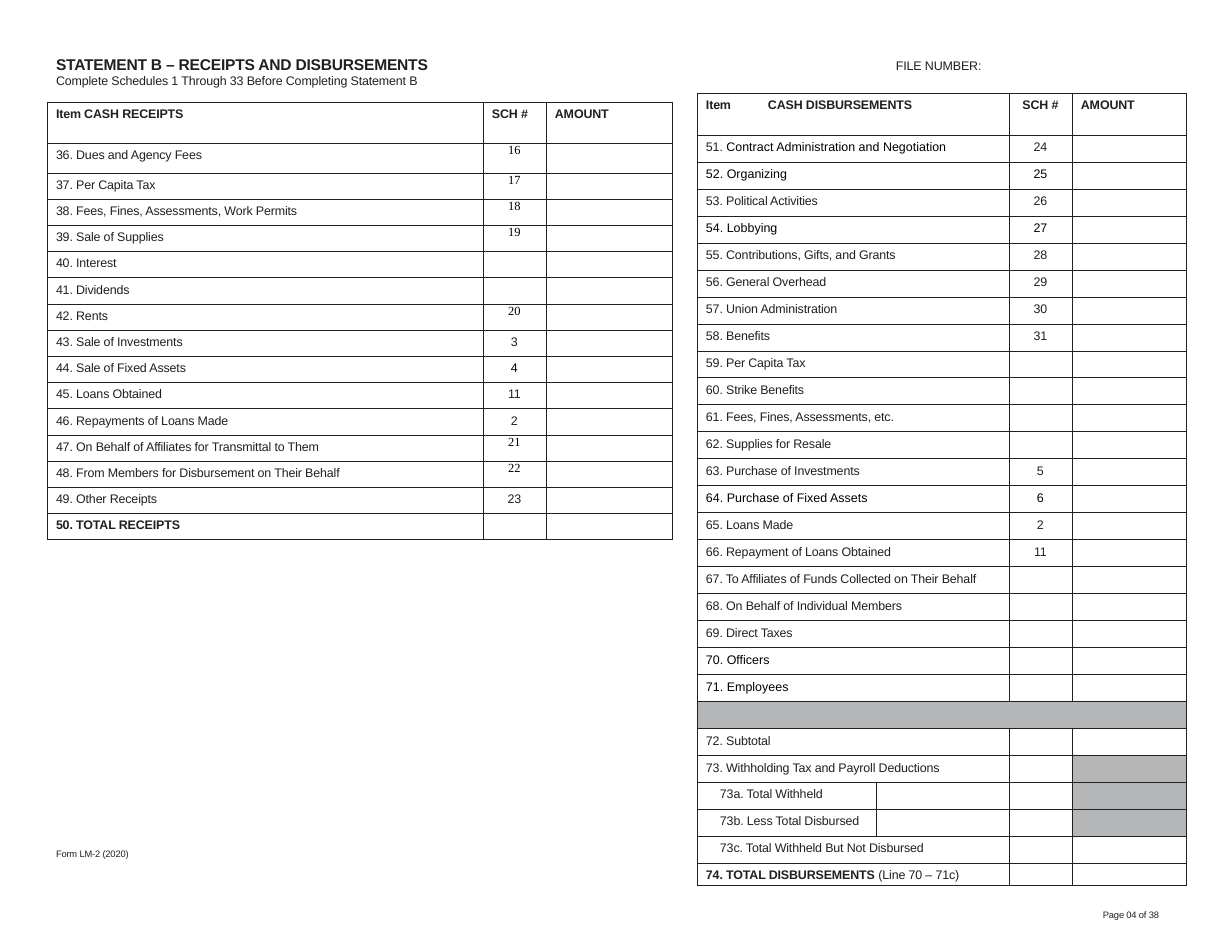
from lxml.etree import SubElement
from pptx import Presentation
from pptx.dml.color import RGBColor
from pptx.enum.text import PP_ALIGN
from pptx.oxml.ns import qn
from pptx.util import Emu, Pt

SCALE = 914400 / 112
INK = RGBColor(0x23, 0x1F, 0x20)
BLACK = RGBColor(0, 0, 0)
GREY = RGBColor(0xB4, 0xB6, 0xB8)
SANS, SERIF = "Arial", "Times New Roman"

# Item, schedule number
RECEIPTS = [
    ("36. Dues and Agency Fees", "16"),
    ("37. Per Capita Tax", "17"),
    ("38. Fees, Fines, Assessments, Work Permits", "18"),
    ("39. Sale of Supplies", "19"),
    ("40. Interest", ""),
    ("41. Dividends", ""),
    ("42. Rents", "20"),
    ("43. Sale of Investments", "3"),
    ("44. Sale of Fixed Assets", "4"),
    ("45. Loans Obtained", "11"),
    ("46. Repayments of Loans Made", "2"),
    ("47. On Behalf of Affiliates for Transmittal to Them", "21"),
    ("48. From Members for Disbursement on Their Behalf", "22"),
    ("49. Other Receipts", "23"),
    ("50. TOTAL RECEIPTS", ""),
]
SERIF_SCH = {"16", "17", "18", "19", "20", "21", "22"}

SPENDING = [
    ("51. Contract Administration and Negotiation", "24"),
    ("52. Organizing", "25"),
    ("53. Political Activities", "26"),
    ("54. Lobbying", "27"),
    ("55. Contributions, Gifts, and Grants", "28"),
    ("56. General Overhead", "29"),
    ("57. Union Administration", "30"),
    ("58. Benefits", "31"),
    ("59. Per Capita Tax", ""),
    ("60. Strike Benefits", ""),
    ("61. Fees, Fines, Assessments, etc.", ""),
    ("62. Supplies for Resale", ""),
    ("63. Purchase of Investments", "5"),
    ("64. Purchase of Fixed Assets", "6"),
    ("65. Loans Made", "2"),
    ("66. Repayment of Loans Obtained", "11"),
    ("67. To Affiliates of Funds Collected on Their Behalf", ""),
    ("68. On Behalf of Individual Members", ""),
    ("69. Direct Taxes", ""),
    ("70. Officers", ""),
    ("71. Employees", ""),
    ("", ""),
    ("72. Subtotal", ""),
    ("73. Withholding Tax and Payroll Deductions", ""),
    ("73a. Total Withheld", ""),
    ("73b. Less Total Disbursed", ""),
    ("73c. Total Withheld But Not Disbursed", ""),
    ("74. TOTAL DISBURSEMENTS ", ""),
]
DARK = {"52.", "54.", "64.", "70.", "71."}
SPLIT = {"73a.", "73b."}
NO_SUM = SPLIT | {"73."}


def px(n):
    return Emu(round(n * SCALE))


class Form:
    """Text style and the slide being filled."""

    def __init__(self, slide):
        self.slide = slide

    def style(self, run, size=8, bold=False, color=INK, face=SANS):
        font = run.font
        font.size, font.bold, font.name = Pt(size), bold, face
        font.color.rgb = color
        if color == INK:
            run._r.get_or_add_rPr().set("spc", "-10")

    def add(self, par, text, **look):
        run = par.add_run()
        run.text = text
        self.style(run, **look)

    def note(self, x, y, w, h, *lines):
        """Place a text box; each line is text, size, bold, line height."""
        frame = self.slide.shapes.add_textbox(px(x), px(y), px(w), px(h)).text_frame
        frame.word_wrap = True
        frame.margin_left = frame.margin_right = 0
        frame.margin_top = frame.margin_bottom = 0
        for i, (text, size, bold, lead) in enumerate(lines):
            par = frame.add_paragraph() if i else frame.paragraphs[0]
            par.text = text
            if lead:
                par.line_spacing = Pt(lead)
            self.style(par.runs[0], size, bold)

    def table(self, x, y, cols, rows):
        shape = self.slide.shapes.add_table(
            len(rows), len(cols), px(x), px(y), px(sum(cols)), px(sum(rows)))
        grid = shape.table
        grid.first_row = grid.horz_banding = False
        for col, w in zip(grid.columns, cols):
            col.width = px(w)
        for row, h in zip(grid.rows, rows):
            row.height = px(h)
            for cell in row.cells:
                self.blank(cell)
        return grid

    def blank(self, cell):
        """Clear the cell's fill and insets and rule its four sides."""
        cell.margin_left = cell.margin_right = 0
        cell.margin_top = cell.margin_bottom = 0
        props = cell._tc.get_or_add_tcPr()
        for side in "LRTB":
            line = SubElement(props, qn("a:ln" + side), w=str(Pt(0.5)))
            fill = SubElement(line, qn("a:solidFill"))
            SubElement(fill, qn("a:srgbClr"), val=str(INK))
        cell.fill.background()
        par = cell.text_frame.paragraphs[0]
        SubElement(par._p, qn("a:endParaRPr"), sz="800")

    def cell(self, cell, text, left=9, top=5, mid=False, **look):
        """Write in a cell, and return its paragraph."""
        cell.margin_top = px(top)
        cell.margin_left = px(0 if mid else left)
        par = cell.text_frame.paragraphs[0]
        par.text = text
        if mid:
            par.alignment = PP_ALIGN.CENTER
        for run in par.runs:
            self.style(run, **look)
        return par

    def shade(self, cell):
        cell.fill.solid()
        cell.fill.fore_color.rgb = GREY


def receipts(form):
    rest = len(RECEIPTS) - 1
    grid = form.table(47, 102, [436, 63, 126], [41, 30] + [367 / rest] * rest)
    for i, text in enumerate(["Item CASH RECEIPTS", "SCH #", "AMOUNT"]):
        form.cell(grid.cell(0, i), text, bold=True)
    for r, (item, sch) in enumerate(RECEIPTS, 1):
        form.cell(grid.cell(r, 0), item, bold="TOTAL" in item)
        if sch in SERIF_SCH:
            form.cell(grid.cell(r, 1), sch, top=0, mid=True, color=BLACK, face=SERIF)
        elif sch:
            form.cell(grid.cell(r, 1), sch, mid=True, color=BLACK if sch == "4" else INK)


def spending(form):
    rows = [42] + [27] * (len(SPENDING) - 1) + [22]
    grid = form.table(697, 93, [179, 133, 63, 114], rows)
    grid.cell(0, 0).merge(grid.cell(0, 1))
    head = form.cell(grid.cell(0, 0), "Item\tCASH DISBURSEMENTS", bold=True)
    tabs = SubElement(head._p.get_or_add_pPr(), qn("a:tabLst"))
    SubElement(tabs, qn("a:tab"), pos=str(px(62)), algn="l")
    form.cell(grid.cell(0, 2), "SCH #", mid=True, bold=True)
    form.cell(grid.cell(0, 3), "AMOUNT", bold=True)

    for r, (item, sch) in enumerate(SPENDING, 1):
        first, last = grid.cell(r, 0), grid.cell(r, 3)
        if not item:
            first.merge(last)
            form.shade(first)
            continue
        key = item.split()[0]
        if key not in SPLIT:
            first.merge(grid.cell(r, 1))
        if key in NO_SUM:
            form.shade(last)
        color = BLACK if key in DARK else INK
        if key == "51.":
            par = form.cell(first, "51. ")
            form.add(par, item[4:], color=BLACK)
        else:
            left = 23 if key[:-1].isalnum() and not key[:-1].isdigit() else 9
            par = form.cell(first, item, left, color=color, bold="TOTAL" in item)
        if key == "74.":
            form.add(par, "(Line 70 – 71c)")
        if sch:
            form.cell(grid.cell(r, 2), sch, mid=True, color=color)


def main():
    deck = Presentation()
    deck.slide_width, deck.slide_height = px(1232), px(952)
    form = Form(deck.slides.add_slide(deck.slide_layouts[6]))
    form.note(56, 848, 202, 12, ("Form LM-2 (2020)", 6, False, None))
    form.note(1103, 909, 80, 12, ("Page 04 of 38", 6, False, None))
    form.note(896, 58, 100, 16, ("FILE NUMBER:", 8, False, None))
    form.note(56, 55, 400, 34,
              ("STATEMENT B – RECEIPTS AND DISBURSEMENTS", 10, True, 11.8),
              ("Complete Schedules 1 Through 33 Before Completing Statement B", 8, False, 9.4))
    receipts(form)
    spending(form)
    deck.save("out.pptx")


if __name__ == "__main__":
    main()
